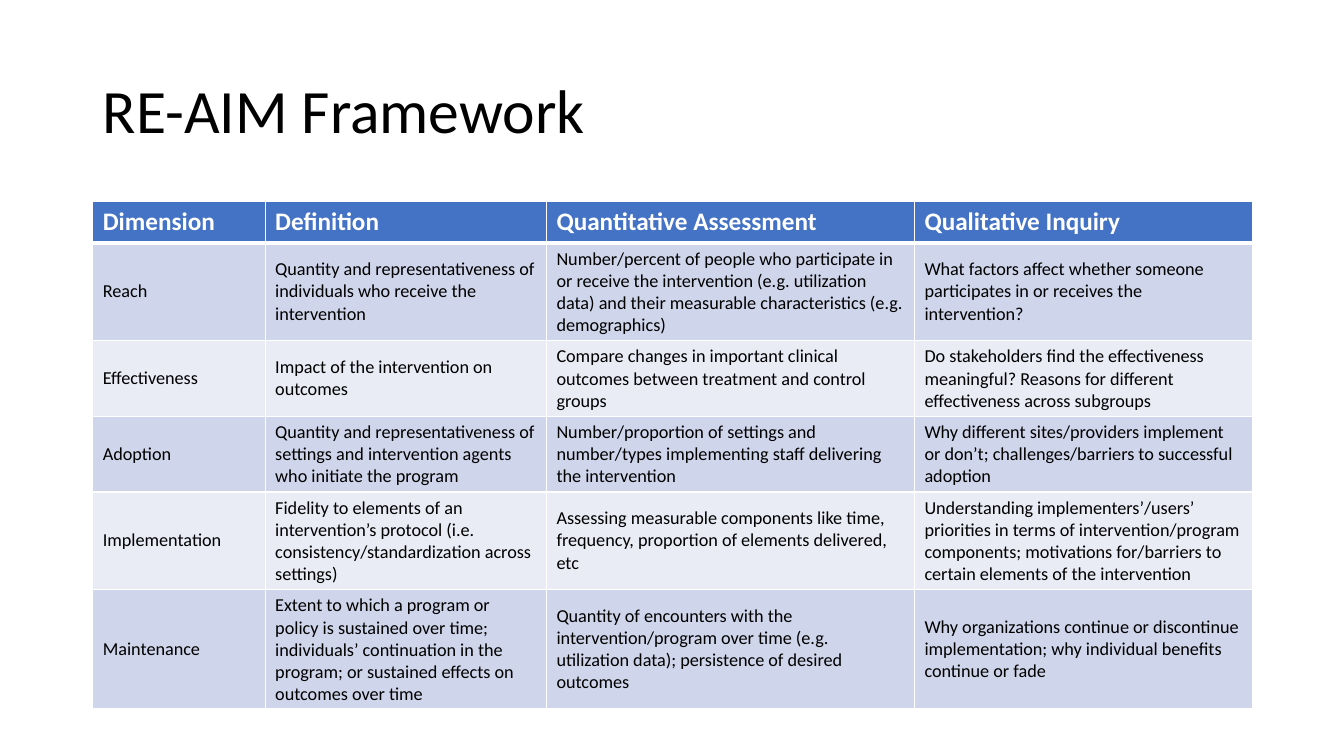
from lxml import etree
from pptx import Presentation
from pptx.dml.color import RGBColor
from pptx.enum import text
from pptx.oxml.ns import qn
from pptx.util import Inches, Pt

TITLE = "RE-AIM Framework"
HEADER = ("Dimension", "Definition", "Quantitative Assessment", "Qualitative Inquiry")
DIMENSIONS = [
    ("Reach",
     "Quantity and representativeness of individuals who receive the intervention",
     "Number/percent of people who participate in or receive the intervention "
     "(e.g. utilization data) and their measurable characteristics (e.g. demographics)",
     "What factors affect whether someone participates in or receives the intervention?"),
    ("Effectiveness",
     "Impact of the intervention on outcomes",
     "Compare changes in important clinical outcomes between treatment and control groups",
     "Do stakeholders find the effectiveness meaningful? Reasons for different "
     "effectiveness across subgroups"),
    ("Adoption",
     "Quantity and representativeness of settings and intervention agents who initiate "
     "the program",
     "Number/proportion of settings and number/types implementing staff delivering "
     "the intervention",
     "Why different sites/providers implement or don’t; challenges/barriers to "
     "successful adoption"),
    ("Implementation",
     "Fidelity to elements of an intervention’s protocol (i.e. "
     "consistency/standardization across settings)",
     "Assessing measurable components like time, frequency, proportion of elements "
     "delivered, etc",
     "Understanding implementers’/users’ priorities in terms of intervention/program "
     "components; motivations for/barriers to certain elements of the intervention"),
    ("Maintenance",
     "Extent to which a program or policy is sustained over time; individuals’ "
     "continuation in the program; or sustained effects on outcomes over time",
     "Quantity of encounters with the intervention/program over time (e.g. utilization "
     "data); persistence of desired outcomes",
     "Why organizations continue or discontinue implementation; why individual benefits "
     "continue or fade"),
]
LEFT, WIDTH = 0.92, 11.5
TABLE_TOP, TABLE_HEIGHT = 2, 5.02
COLUMN_WIDTHS = (1.71, 2.79, 3.65, 3.35)
MIN_ROW_HEIGHT = 0.41  # rows grow to fit their text
HEADER_FILL, BANDS = "4472C4", ("CFD5EA", "E9EBF5")
BLACK, WHITE = "000000", "FFFFFF"


def rgb(value):
    return RGBColor.from_string(value)


def write(tf, content, size, color=BLACK, bold=False, spacing=None):
    tf.word_wrap = True
    p = tf.paragraphs[0]
    p.line_spacing = spacing
    r = p.add_run()
    r.text = content
    r.font.name, r.font.size, r.font.bold = "Calibri", Pt(size), bold
    r.font.color.rgb = rgb(color)


def add_borders(cell, **widths):
    """Draw white borders; widths in points are given for L, R, T and B."""
    props = cell._tc.get_or_add_tcPr()
    for side in "LRTB":
        line = etree.SubElement(props, qn(f"a:ln{side}"), w=str(Pt(widths.get(side, 1))))
        fill = etree.SubElement(line, qn("a:solidFill"))
        etree.SubElement(fill, qn("a:srgbClr"), val=WHITE)


def add_title(s):
    box = s.shapes.add_textbox(Inches(LEFT), Inches(0.4), Inches(WIDTH), Inches(1.45))
    box.text_frame.vertical_anchor = text.MSO_ANCHOR.MIDDLE
    write(box.text_frame, TITLE, 44, spacing=0.9)


def add_framework(s):
    rows = [HEADER, *DIMENSIONS]
    frame = s.shapes.add_table(len(rows), len(HEADER), Inches(LEFT), Inches(TABLE_TOP),
                               Inches(WIDTH), Inches(TABLE_HEIGHT))
    table = frame.table
    for column, width in zip(table.columns, COLUMN_WIDTHS):
        column.width = Inches(width)
    for i, row in enumerate(rows):
        table.rows[i].height = Inches(MIN_ROW_HEIGHT)
        for j, content in enumerate(row):
            cell = table.cell(i, j)
            add_borders(cell, T=3 if i == 1 else 1, B=3 if i == 0 else 1)
            cell.fill.solid()
            if i == 0:
                cell.fill.fore_color.rgb = rgb(HEADER_FILL)
                write(cell.text_frame, content, 18, WHITE, bold=True)
            else:
                cell.fill.fore_color.rgb = rgb(BANDS[(i - 1) % 2])
                cell.vertical_anchor = text.MSO_ANCHOR.MIDDLE
                write(cell.text_frame, content, 13)
    frame.height = Inches(TABLE_HEIGHT)


def main():
    prs = Presentation()
    prs.slide_width, prs.slide_height = Inches(13.33), Inches(7.5)
    s = prs.slides.add_slide(prs.slide_layouts[6])
    add_title(s)
    add_framework(s)
    prs.save("out.pptx")


if __name__ == "__main__":
    main()
